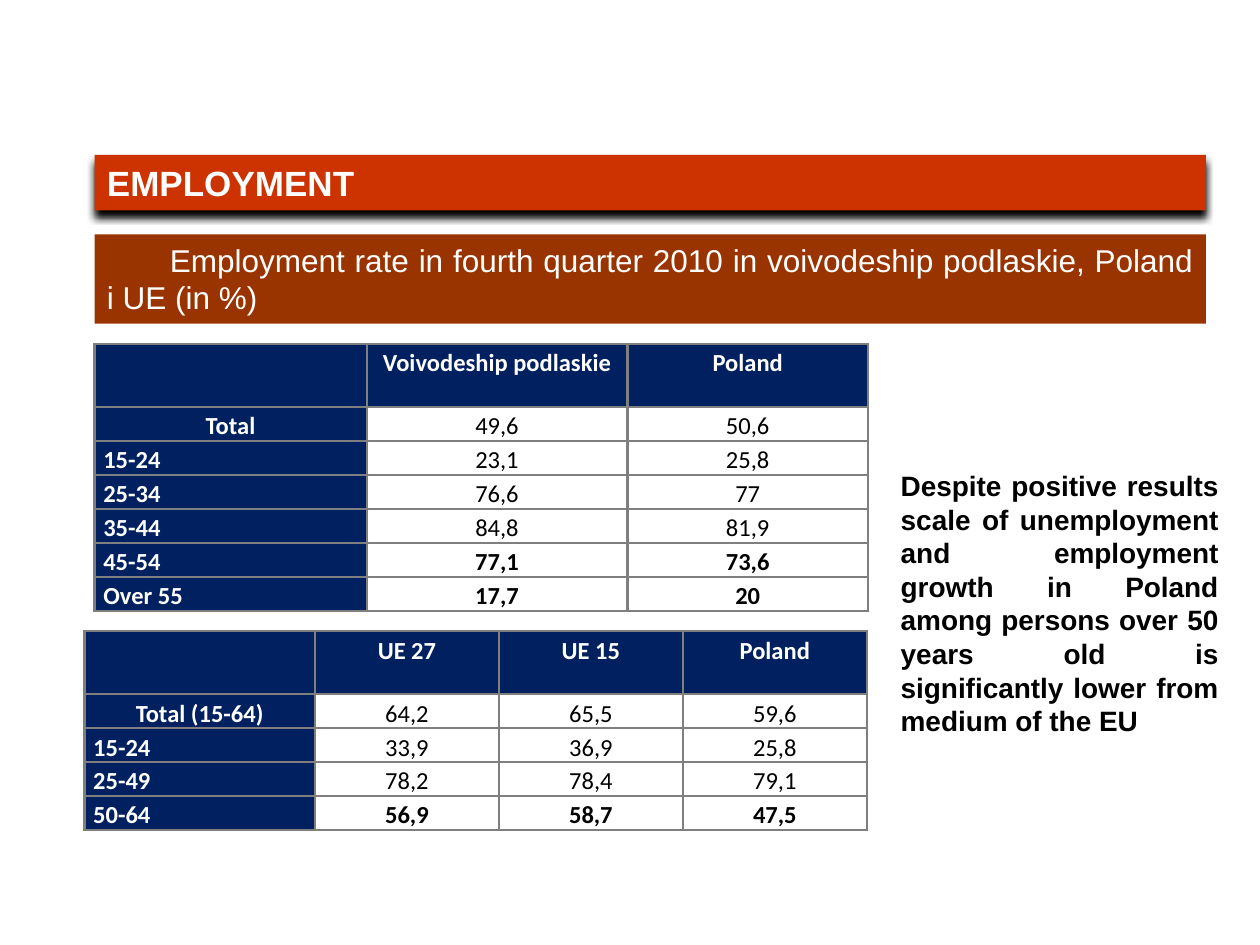
import pptx
import pptx.dml.color
import pptx.enum.shapes
import pptx.enum.text
import pptx.oxml
import pptx.oxml.ns
import pptx.util

Inches = pptx.util.Inches
Pt = pptx.util.Pt
Align = pptx.enum.text.PP_ALIGN
NAMESPACE = pptx.oxml.ns.nsdecls("a")


def colour(value):
    return pptx.dml.color.RGBColor.from_string(value)


class EmploymentSlide:
    white = "FFFFFF"
    black = "000000"
    navy = "002060"
    border = "7F7F7F"
    header_height = 0.5
    row_height = 0.27

    def __init__(self, presentation):
        self.slide = presentation.slides.add_slide(presentation.slide_layouts[6])

    def style(self, paragraph, font, size, text_colour, bold, align):
        paragraph.alignment = align
        paragraph.font.name = font
        paragraph.font.size = Pt(size)
        paragraph.font.bold = bold
        paragraph.font.color.rgb = colour(text_colour)

    def set_text(self, shape, text, size, text_colour, bold):
        frame = shape.text_frame
        frame.word_wrap = True
        frame.auto_size = pptx.enum.text.MSO_AUTO_SIZE.SHAPE_TO_FIT_TEXT
        frame.vertical_anchor = pptx.enum.text.MSO_ANCHOR.TOP
        frame.text = text
        self.style(frame.paragraphs[0], "Arial", size, text_colour, bold, Align.JUSTIFY)

    def banner(self, top, height, text, size, fill, bold=False, shadow=False):
        shape = self.slide.shapes.add_shape(
            pptx.enum.shapes.MSO_SHAPE.RECTANGLE,
            Inches(0.75), Inches(top), Inches(8.82), Inches(height))
        shape.fill.solid()
        shape.fill.fore_color.rgb = colour(fill)
        shape.line.fill.background()
        shape.shadow.inherit = False
        if shadow:
            effects = shape._element.spPr.find(pptx.oxml.ns.qn("a:effectLst"))
            effects.append(pptx.oxml.parse_xml(
                f'<a:outerShdw {NAMESPACE} blurRad="{Pt(4)}" dist="{Pt(4)}" dir="5400000" '
                f'algn="ctr" rotWithShape="0"><a:srgbClr val="{self.black}"/></a:outerShdw>'))
        self.set_text(shape, text, size, self.white, bold)

    def note(self, left, top, width, height, text):
        box = self.slide.shapes.add_textbox(
            Inches(left), Inches(top), Inches(width), Inches(height))
        self.set_text(box, text, 16, self.black, True)

    def cell(self, cell, text, heading, bold, align):
        cell.margin_left = cell.margin_right = Inches(0.07)
        cell.margin_top = cell.margin_bottom = 0
        if heading:
            cell.fill.solid()
            cell.fill.fore_color.rgb = colour(self.navy)
        else:
            cell.fill.background()
        cell.text = text
        paragraph = cell.text_frame.paragraphs[0]
        paragraph.line_spacing = 1.15
        self.style(paragraph, "Calibri", 14, self.white if heading else self.black, bold, align)
        properties = cell._tc.get_or_add_tcPr()
        for index, side in enumerate("LRTB"):
            properties.insert(index, pptx.oxml.parse_xml(
                f'<a:ln{side} {NAMESPACE} w="{Pt(1.5)}"><a:solidFill>'
                f'<a:srgbClr val="{self.border}"/></a:solidFill></a:ln{side}>'))

    def table(self, left, top, widths, rows, label_align, bold_rows):
        height = self.header_height + self.row_height * (len(rows) - 1)
        table = self.slide.shapes.add_table(
            len(rows), len(widths), Inches(left), Inches(top),
            Inches(sum(widths)), Inches(height)).table
        table.horz_banding = False
        for column, width in zip(table.columns, widths):
            column.width = Inches(width)
        for r, values in enumerate(rows):
            table.rows[r].height = Inches(self.row_height if r else self.header_height)
            for c, value in enumerate(values):
                heading = r == 0 or c == 0
                bold = heading or r >= len(rows) - bold_rows
                align = label_align if c == 0 and r > 1 else Align.CENTER
                self.cell(table.cell(r, c), value, heading, bold, align)


def main():
    presentation = pptx.Presentation()
    presentation.slide_width = Inches(10)
    presentation.slide_height = Inches(7.5)
    employment = EmploymentSlide(presentation)

    employment.banner(1.23, 0.44, "EMPLOYMENT", 20, "CC3300", bold=True, shadow=True)
    employment.banner(
        1.86, 0.71,
        "\tEmployment rate in fourth quarter 2010 in voivodeship podlaskie, Poland i UE (in %)",
        18, "993300")

    region_rates = [
        ("", "Voivodeship podlaskie", "Poland"),
        ("Total", "49,6", "50,6"),
        ("15-24", "23,1", "25,8"),
        ("25-34", "76,6", "77"),
        ("35-44", "84,8", "81,9"),
        ("45-54", "77,1", "73,6"),
        ("Over 55", "17,7", "20"),
    ]
    employment.table(0.75, 2.73, [2.16, 2.07, 1.91], region_rates, Align.LEFT, bold_rows=2)

    union_rates = [
        ("", "UE 27", "UE 15", "Poland"),
        ("Total (15-64)", "64,2", "65,5", "59,6"),
        ("15-24", "33,9", "36,9", "25,8"),
        ("25-49", "78,2", "78,4", "79,1"),
        ("50-64", "56,9", "58,7", "47,5"),
    ]
    employment.table(0.67, 5.01, [1.83] + [1.46] * 3, union_rates, Align.JUSTIFY, bold_rows=1)

    employment.note(
        7.05, 3.67, 2.72, 2.24,
        "Despite positive results scale of unemployment and employment growth in Poland "
        "among persons over 50 years old is significantly lower from medium of the EU")

    presentation.save("out.pptx")


if __name__ == "__main__":
    main()
